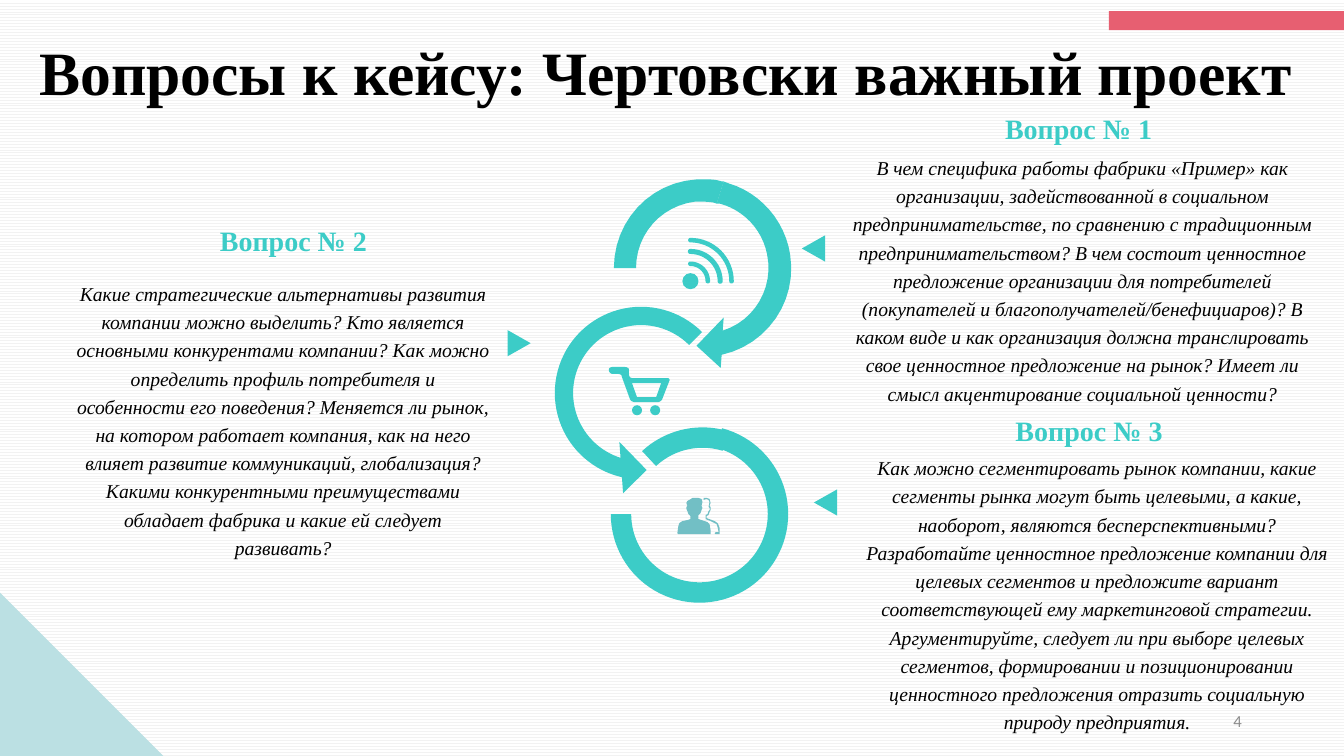
"""Build a slide with three case questions around a chain of circular arrows."""
from math import cos, radians, sin

from pptx import Presentation
from pptx.dml.color import RGBColor
from pptx.enum.dml import MSO_PATTERN
from pptx.enum.shapes import MSO_SHAPE
from pptx.enum.text import MSO_ANCHOR, MSO_AUTO_SIZE, PP_ALIGN
from pptx.util import Inches, Pt

CELL = Inches(0.01)
COLUMNS, ROWS = 1333.33, 750
BLACK = RGBColor(0x00, 0x00, 0x00)
WHITE = RGBColor(0xFF, 0xFF, 0xFF)
PALE_GREY = RGBColor(0xF2, 0xF2, 0xF2)
GREY = RGBColor(0x8C, 0x8C, 0x8C)
TEAL = RGBColor(0x3C, 0xCC, 0xC7)
DUSTY_TEAL = RGBColor(0x72, 0xBF, 0xC5)
PALE_BLUE = RGBColor(0xBB, 0xE0, 0xE3)
PINK = RGBColor(0xE7, 0x5F, 0x71)
SERIF, SANS = "Times New Roman", "Calibri"
LEFT, CENTER, RIGHT = PP_ALIGN.LEFT, PP_ALIGN.CENTER, PP_ALIGN.RIGHT
MIDDLE = MSO_ANCHOR.MIDDLE
GROW, FIXED = MSO_AUTO_SIZE.SHAPE_TO_FIT_TEXT, MSO_AUTO_SIZE.NONE
ZIG_ZAG = MSO_PATTERN.ZIG_ZAG
RECTANGLE, OVAL = MSO_SHAPE.RECTANGLE, MSO_SHAPE.OVAL
CORNER, POINTER = MSO_SHAPE.RIGHT_TRIANGLE, MSO_SHAPE.ISOSCELES_TRIANGLE
ARC, ARROW = MSO_SHAPE.BLOCK_ARC, MSO_SHAPE.LEFT_CIRCULAR_ARROW

TITLE = "Вопросы к кейсу: Чертовски важный проект"
PAGE_NUMBER = "4"
QUESTIONS = [
    ("Вопрос № 2", (207, 217), RIGHT, (64, 270, 434, 319),
     "Какие стратегические альтернативы развития компании можно выделить? Кто является "
     "основными конкурентами компании? Как можно определить профиль потребителя и "
     "особенности его поведения? Меняется ли рынок, на котором работает компания, как на "
     "него влияет развитие коммуникаций, глобализация? Какими конкурентными "
     "преимуществами обладает фабрика и какие ей следует развивать?", (502, 329), 90),
    ("Вопрос № 1", (986, 106), RIGHT, (833, 145, 482, 293),
     "В чем специфика работы фабрики «Пример» как организации, задействованной в "
     "социальном предпринимательстве, по сравнению с традиционным предпринимательством? "
     "В чем состоит ценностное предложение организации для потребителей (покупателей и "
     "благополучателей/бенефициаров)? В каком виде и как организация должна "
     "транслировать свое ценностное предложение на рынок? Имеет ли смысл акцентирование "
     "социальной ценности?", (794, 235), 270),
    ("Вопрос № 3", (997, 405), CENTER, (844, 443, 489, 290),
     "Как можно сегментировать рынок компании, какие сегменты рынка могут быть целевыми, "
     "а какие, наоборот, являются бесперспективными? Разработайте ценностное предложение "
     "компании для целевых сегментов и предложите вариант соответствующей ему "
     "маркетинговой стратегии. Аргументируйте, следует ли при выборе целевых сегментов, "
     "формировании и позиционировании ценностного предложения отразить социальную "
     "природу предприятия.", (806, 487), 270),
]
DECOR = [
    (CORNER, (0, 588, 162, 162), PALE_BLUE, ()),
    (RECTANGLE, (1100, 11, 233.33, 19), PINK, ()),
    (ARROW, (534, 288, 204, 204), TEAL, (0.089, 11.423, 62.936, 189, 0.125)),
    (ARC, (609, 424, 176, 176), TEAL, (136.244, 172.282, 0.115)),
    (ARC, (606, 422, 176, 176), TEAL, (170.851, 108, 0.115)),
]
# Outline steps: a pair is a straight line, six numbers are a cubic curve.
RING_TAIL = [(699, 178), (705, 178, 710, 178, 716, 180), (718, 180), (711, 202), (708, 201),
             (702, 200, 696, 200, 690, 200), (656, 204, 631, 232, 631, 266), (609, 266),
             (609, 220, 644, 181, 691, 178), (693, 178, 696, 178, 699, 178)]
RING_HEAD = [(718, 180), (723, 182), (754, 191, 779, 219, 784, 253),
             (791, 299, 761, 342, 716, 352), (715, 365), (691, 343), (718, 315), (717, 328),
             (749, 318, 768, 285, 761, 252), (756, 227, 737, 208, 714, 202), (711, 202)]
CART_BODY = [(662, 375), (627, 375), (625, 375, 624, 373, 624, 371), (624, 367),
             (624, 365, 622, 364, 619, 364), (608, 364), (606, 364, 604, 365, 604, 367),
             (604, 369, 606, 371, 608, 371), (612, 371), (614, 371, 617, 371, 617, 374),
             (625, 396), (626, 398, 628, 399, 631, 399), (652, 399),
             (654, 399, 656, 398, 657, 396), (664, 378), (665, 377, 664, 375, 662, 375)]
CART_BASKET = [(651, 394), (632, 394), (627, 380), (656, 380)]
CART_WHEELS = [(627, 402, 10, 10), (645, 402, 10, 10)]
SIGNAL_CENTRE, SIGNAL_DOT = (685, 279), (677, 271, 16, 16)
SIGNAL_BANDS = [(15, 19.5), (27, 32), (38.5, 43)]
FRONT_PERSON = [(696, 516), (693, 515), (693, 511), (695, 509), (696, 506), (697, 504),
                (696, 502), (697, 498), (696, 495), (693, 494), (687, 494), (684, 496),
                (682, 497), (681, 499), (682, 502), (681, 503), (681, 505), (682, 507),
                (683, 510), (685, 512), (685, 515), (682, 516), (677, 517), (674, 519),
                (673, 522), (672, 529), (673, 530), (705, 530), (705, 526), (704, 520),
                (702, 518)]
BACK_PERSON = [(713, 521), (712, 519), (709, 517), (701, 514), (701, 512), (703, 511),
               (704, 508), (705, 506), (705, 503), (704, 502), (705, 499), (704, 495),
               (701, 494), (698, 494), (698, 496), (701, 495), (703, 496), (704, 498),
               (703, 503), (704, 504), (704, 506), (703, 507), (702, 510), (700, 511),
               (700, 515), (705, 517), (711, 520), (712, 523), (713, 528), (710, 528),
               (709, 529), (710, 530), (714, 530), (714, 524)]


def apply(target, **values):
    for name, value in values.items():
        setattr(target, name, value)


def paint(shape, color):
    shape.shadow.inherit = False
    shape.fill.solid()
    shape.fill.fore_color.rgb = color
    shape.line.fill.background()


def add_preset(shapes, preset, box, color, adjustments=(), rotation=0):
    shape = shapes.add_shape(preset, *(round(value * CELL) for value in box))
    paint(shape, color)
    shape.rotation = rotation
    for index, value in enumerate(adjustments):
        shape.adjustments[index] = value


def flatten(outline, steps=12):
    points = [outline[0]]
    for step in outline[1:]:
        if len(step) == 2:
            points.append(step)
            continue
        start, first, second, end = points[-1], step[:2], step[2:4], step[4:]
        for t in (number / steps for number in range(1, steps + 1)):
            u = 1 - t
            points.append(tuple(u**3 * a + 3 * u * u * t * b + 3 * u * t * t * c + t**3 * d
                                for a, b, c, d in zip(start, first, second, end)))
    return [(round(x * CELL), round(y * CELL)) for x, y in points]


def add_outline(shapes, color, *outlines):
    contours = [flatten(outline) for outline in outlines]
    builder = shapes.build_freeform(*contours[0][0])
    for index, points in enumerate(contours):
        if index:
            builder.move_to(*points[0])
        builder.add_line_segments(points[1:], close=True)
    paint(builder.convert_to_shape(), color)


def arc(centre, radius, start, end, steps=16):
    angles = [radians(start + (end - start) * n / steps) for n in range(steps + 1)]
    return [(centre[0] + radius * cos(a), centre[1] + radius * sin(a)) for a in angles]


def signal_band(inner, outer):
    x, y = SIGNAL_CENTRE
    middle, cap = (inner + outer) / 2, (outer - inner) / 2
    return (arc((x, y), outer, -90, 0) + arc((x + middle, y), cap, 0, 180)
            + arc((x, y), inner, 0, -90) + arc((x, y - middle), cap, 90, 270))


def add_text(shapes, box, text, font, align=LEFT, spacing=None, **frame_values):
    frame = shapes.add_textbox(*(round(value * CELL) for value in box)).text_frame
    apply(frame, **{"word_wrap": True, "auto_size": GROW, **frame_values})
    paragraph = frame.paragraphs[0]
    apply(paragraph, alignment=align, line_spacing=spacing)
    run = paragraph.add_run()
    run.text = text
    color, *_ = font["color"],
    apply(run.font, **{name: value for name, value in font.items() if name != "color"})
    run.font.color.rgb = color


def main():
    deck = Presentation()
    apply(deck, slide_width=round(COLUMNS * CELL), slide_height=ROWS * CELL)
    slide = deck.slides.add_slide(deck.slide_layouts[6])
    shapes = slide.shapes
    backdrop = slide.background.fill
    backdrop.patterned()
    backdrop.pattern = ZIG_ZAG
    backdrop.fore_color.rgb, backdrop.back_color.rgb = PALE_GREY, WHITE

    title_font = {"name": SERIF, "size": Pt(44), "bold": True, "color": BLACK}
    heading_font = {"name": SERIF, "size": Pt(20), "bold": True, "color": TEAL}
    body_font = {"name": SERIF, "size": Pt(14), "italic": True, "color": BLACK}
    number_font = {"name": SANS, "size": Pt(12), "color": GREY}

    add_text(shapes, (39, 34, 1276, 74), TITLE, title_font,
             margin_left=0, margin_top=0, margin_right=0, margin_bottom=0)
    for decoration in DECOR:
        add_preset(shapes, *decoration)
    add_text(shapes, (942, 695, 300, 40), PAGE_NUMBER, number_font, RIGHT,
             vertical_anchor=MIDDLE, auto_size=FIXED)
    for ring_part in (RING_TAIL, RING_HEAD):
        add_outline(shapes, TEAL, ring_part)

    cart = shapes.add_group_shape().shapes
    for wheel in CART_WHEELS:
        add_preset(cart, OVAL, wheel, TEAL)
    add_outline(cart, TEAL, CART_BODY, CART_BASKET)
    signal = shapes.add_group_shape().shapes
    add_preset(signal, OVAL, SIGNAL_DOT, TEAL)
    for radii in SIGNAL_BANDS:
        add_outline(signal, TEAL, signal_band(*radii))

    for heading, corner, align, body_box, body, pointer, turn in QUESTIONS:
        add_text(shapes, (*corner, 167, 44), heading, heading_font, align, word_wrap=False)
        add_text(shapes, body_box, body, body_font, CENTER, 1.2)
        add_preset(shapes, POINTER, (*pointer, 26, 23), TEAL, rotation=turn)

    people = shapes.add_group_shape().shapes
    for person in (FRONT_PERSON, BACK_PERSON):
        add_outline(people, DUSTY_TEAL, person)
    deck.save("out.pptx")


if __name__ == "__main__":
    main()
